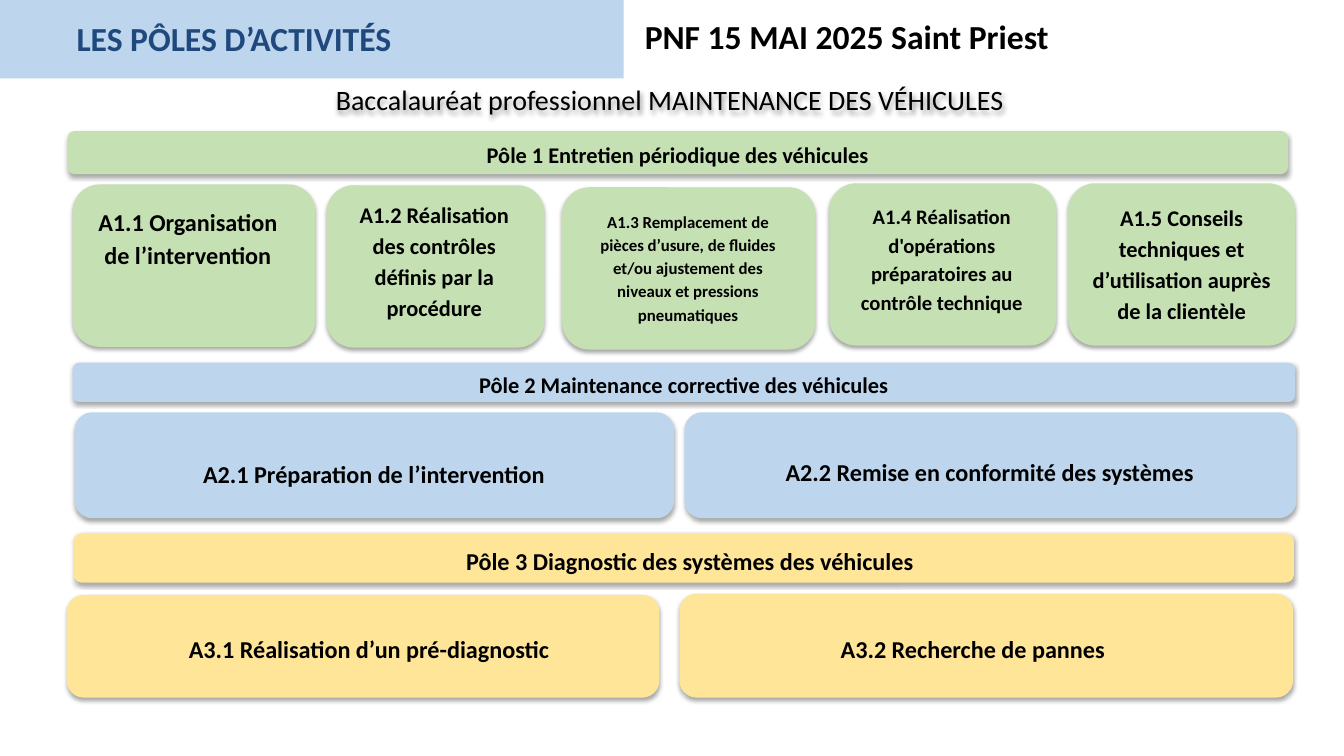
from lxml import etree
from pptx import Presentation
from pptx.dml.color import RGBColor
from pptx.enum.shapes import MSO_SHAPE
from pptx.enum.text import MSO_ANCHOR, PP_ALIGN
from pptx.oxml.ns import qn
from pptx.util import Cm, Pt

RECT = MSO_SHAPE.RECTANGLE
CARD = MSO_SHAPE.FLOWCHART_ALTERNATE_PROCESS
LEFT, MID = PP_ALIGN.LEFT, PP_ALIGN.CENTER
TOP, HALF = MSO_ANCHOR.TOP, MSO_ANCHOR.MIDDLE

COLORS = {"blue": "BDD6EE", "green": "C5E0B3", "gold": "FFE598",
          "navy": "1F497D", "black": "000000", "white": "FFFFFF"}

# Boxes are (left, top, width, height) in cm
HEADER = (0, 0, 15.72, 1.98)
EVENT = ("PNF 15 MAI 2025 Saint Priest", (16, 0.28, 10.74, 1.27))
TITLE = ("LES PÔLES D’ACTIVITÉS", (1.68, 0.33, 16.94, 1.27))
DIPLOMA = ("Baccalauréat professionnel MAINTENANCE DES VÉHICULES",
           (4.75, 1.96, 24.26, 1.12))

# Each entry: text, size, card box, label box (None: text sits in the card)
POLES = [
    ("green", 1.15, [
        ("Pôle 1 Entretien périodique des véhicules", 16,
         (1.7, 3.3, 30.76, 1.09), None),
        ("A1.1 Organisation de l’intervention", 17.3,
         (1.83, 4.65, 6.12, 4.09), (2.03, 4.98, 5.41, 1.9)),
        ("A1.2 Réalisation des contrôles définis par la procédure", 16,
         (8.23, 4.67, 5.49, 4.09), (8.48, 4.85, 4.93, 3.35)),
        ("A1.3 Remplacement de pièces d’usure, de fluides et/ou ajustement "
         "des niveaux et pressions pneumatiques", 12,
         (14.17, 4.72, 6.38, 4.09), (14.48, 5.13, 5.72, 3.18)),
        ("A1.4 Réalisation d'opérations préparatoires au contrôle technique",
         14.7, (20.9, 4.62, 5.72, 4.09), (21.21, 4.93, 5.05, 3.1)),
        ("A1.5 Conseils techniques et d’utilisation auprès de la clientèle",
         16, (26.92, 4.62, 5.72, 4.09), (27.15, 4.93, 5.26, 3.35)),
    ]),
    ("blue", 1.15, [
        ("Pôle 2 Maintenance corrective des véhicules", 16,
         (1.83, 9.14, 30.81, 0.99), None),
        ("A2.1 Préparation de l’intervention", 17.3,
         (1.88, 10.39, 15.11, 2.67), (2.77, 11.33, 13.31, 1.07)),
        ("A2.2 Remise en conformité des systèmes", 17.3,
         (17.25, 10.39, 15.42, 2.67), (18.16, 11.28, 13.56, 1.07)),
    ]),
    ("gold", 1.15, [
        ("Pôle 3 Diagnostic des systèmes des véhicules", 17.3,
         (1.85, 13.44, 30.76, 1.24), (2.26, 13.54, 30.25, 1.07)),
    ]),
    ("gold", 1, [
        ("A3.1 Réalisation d’un pré-diagnostic", 17.3,
         (1.68, 14.99, 14.94, 2.59), (2.29, 15.85, 14.02, 0.99)),
        ("A3.2 Recherche de pannes", 17.3,
         (17.12, 14.96, 15.47, 2.62), (17.25, 15.85, 14.53, 0.99)),
    ]),
]


def rgb(name):
    return RGBColor.from_string(COLORS[name])


def shade(item):
    """Soft shadow straight below the item."""
    item.shadow.inherit = False
    effects = item._element.spPr.find(qn("a:effectLst"))
    outer = etree.SubElement(effects, qn("a:outerShdw"), blurRad=str(Pt(3.1)),
                             dist=str(Pt(1.8)), dir="5400000",
                             algn="t", rotWithShape="0")
    tint = etree.SubElement(outer, qn("a:srgbClr"), val=COLORS["black"])
    etree.SubElement(tint, qn("a:alpha"), val="35000")


def draw(kind, box, fill):
    item = slide.shapes.add_shape(kind, *map(Cm, box))
    item.shadow.inherit = False
    item.fill.solid()
    item.fill.fore_color.rgb = rgb(fill)
    item.line.fill.background()
    return item


def write(item, text, size, color="black", bold=True, align=MID,
          anchor=TOP, space=1):
    frame = item.text_frame
    frame.word_wrap = True
    frame.vertical_anchor = anchor
    para = frame.paragraphs[0]
    para.alignment = align
    para.line_spacing = space
    run = para.add_run()
    run.text = text
    style = {"name": "Calibri", "size": Pt(size), "bold": bold}
    for key, value in style.items():
        setattr(run.font, key, value)
    run.font.color.rgb = rgb(color)


deck = Presentation()
deck.slide_width, deck.slide_height = Cm(33.87), Cm(19.05)
slide = deck.slides.add_slide(deck.slide_layouts[6])

# Header
draw(RECT, HEADER, "blue")
text, box = EVENT
write(draw(RECT, box, "white"), text, 24, align=LEFT)
text, box = TITLE
write(slide.shapes.add_textbox(*map(Cm, box)), text, 24, "navy", align=LEFT)

# Diploma name
text, box = DIPLOMA
name = slide.shapes.add_textbox(*map(Cm, box))
write(name, text, 20, bold=False)
shade(name)

# Poles and their activities
for color, space, cards in POLES:
    for text, size, box, inner in cards:
        card = draw(CARD, box, color)
        shade(card)
        if inner:
            write(draw(RECT, inner, color), text, size, space=space)
        else:
            write(card, text, size, anchor=HALF, space=space)

deck.save("out.pptx")
